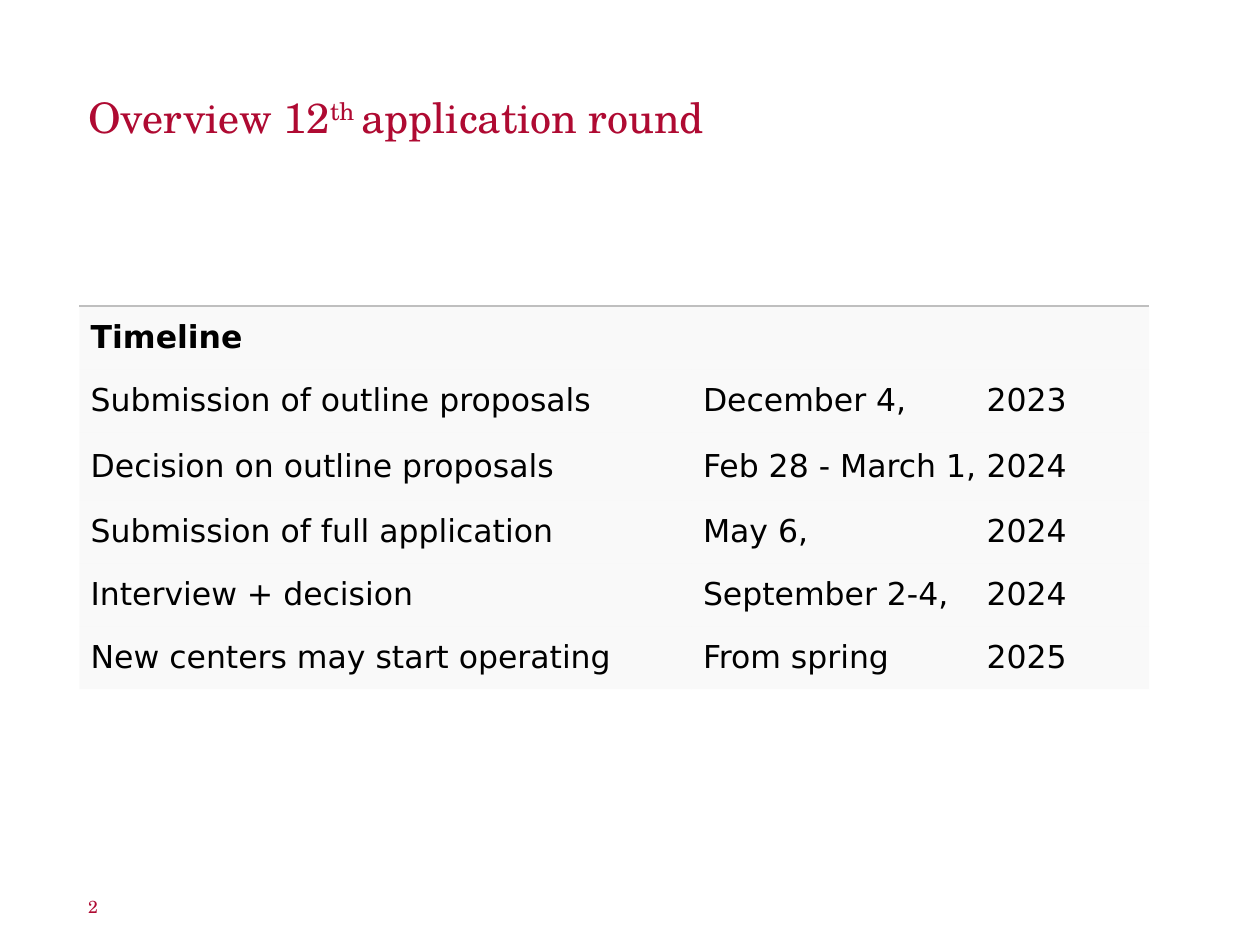
from lxml import etree
from pptx import Presentation, util as u
from pptx.dml.color import RGBColor
from pptx.enum import text
from pptx.oxml.ns import qn

CRIMSON = RGBColor(0xAF, 0x0A, 0x32)
BLACK = RGBColor(0, 0, 0)
PALE = RGBColor(0xF2, 0xF2, 0xF2)
RULE = RGBColor(0xBF, 0xBF, 0xBF)
SERIF, SANS = "TeX Gyre Schola", "DejaVu Sans"
PLAIN_TABLE = "{2D5ABB26-0587-4C30-8999-92F81FD0307C}"
YEAR_TAB = 2.25

TIMELINE = [
    ("Timeline", ""),
    ("Submission of outline proposals", "December 4,\t2023"),
    ("Decision on outline proposals", "Feb 28 - March 1,\t2024"),
    ("Submission of full application", "May 6,\t2024"),
    ("Interview + decision", "September 2-4,\t2024"),
    ("New centers may start operating", "From spring\t2025"),
]


class Deck:
    """Holds the style and the current slide; places are shares of the slide."""

    def __init__(self, width, height):
        self.prs = Presentation()
        self.prs.slide_width, self.prs.slide_height = u.Inches(width), u.Inches(height)
        self.s = self.prs.slides.add_slide(self.prs.slide_layouts[5])

    def box(self, x, y, w, h):
        sw, sh = self.prs.slide_width, self.prs.slide_height
        return int(x * sw), int(y * sh), int(w * sw), int(h * sh)

    def font(self, p, name, size, color, bold=False):
        p.font.name, p.font.size, p.font.bold = name, u.Pt(size), bold
        p.font.color.rgb = color

    def frame(self, sp):
        tf = sp.text_frame
        tf.word_wrap, tf.auto_size = True, text.MSO_AUTO_SIZE.NONE
        tf.vertical_anchor = text.MSO_ANCHOR.BOTTOM
        tf.margin_left = tf.margin_top = tf.margin_right = tf.margin_bottom = 0
        return tf.paragraphs[0]

    def title(self, place, runs):
        sp = self.s.shapes.title
        sp.left, sp.top, sp.width, sp.height = self.box(*place)
        p = self.frame(sp)
        p.alignment, p.line_spacing = text.PP_ALIGN.LEFT, u.Pt(30)
        for words, raised in runs:
            r = p.add_run()
            r.text = words
            if raised:
                r.font._element.set("baseline", "30000")
        self.font(p, SERIF, 24, CRIMSON)

    def label(self, place, words):
        p = self.frame(self.s.shapes.add_textbox(*self.box(*place)))
        p.text = words
        self.font(p, SERIF, 10, CRIMSON)

    def table(self, place, rows, widths, heights):
        shape = self.s.shapes.add_table(len(rows), len(widths), *self.box(*place))
        table = shape.table
        table.first_row = table.horz_banding = False
        table._tbl.tblPr.find(qn("a:tableStyleId")).text = PLAIN_TABLE
        for column, width in zip(table.columns, widths):
            column.width = u.Inches(width)
        for row, height, words in zip(table.rows, heights, rows):
            row.height = u.Inches(height)
            for cell, value in zip(row.cells, words):
                self.cell(cell, value, bold=words is rows[0])
        for cell in table.rows[0].cells:
            self.top_rule(cell)

    def cell(self, cell, words, bold):
        cell.margin_left = cell.margin_right = u.Inches(0.09)
        cell.margin_top, cell.margin_bottom = u.Inches(0.12), 0
        cell.vertical_anchor = text.MSO_ANCHOR.MIDDLE
        cell.fill.solid()
        cell.fill.fore_color.rgb = PALE
        color = cell._tc.tcPr.find(".//" + qn("a:srgbClr"))
        etree.SubElement(color, qn("a:alpha"), val="45000")
        p = cell.text_frame.paragraphs[0]
        p.text, p.line_spacing = words, u.Pt(12.5)
        if "\t" in words:
            tabs = etree.SubElement(p._p.get_or_add_pPr(), qn("a:tabLst"))
            etree.SubElement(tabs, qn("a:tab"), pos=str(u.Inches(YEAR_TAB)), algn="l")
        self.font(p, SANS, 18, BLACK, bold)

    def top_rule(self, cell):
        line = etree.Element(qn("a:lnT"), w=str(u.Pt(1)))
        fill = etree.SubElement(line, qn("a:solidFill"))
        etree.SubElement(fill, qn("a:srgbClr"), val=str(RULE))
        cell._tc.tcPr.insert(0, line)


def main():
    deck = Deck(10, 7.5)

    # Heading
    deck.title((0.07, 0.05, 0.86, 0.1),
               [("Overview 12", False), ("th ", True), ("application round", False)])

    # Page number
    deck.label((0.07, 0.93, 0.04, 0.04), "2")

    # Timeline table
    deck.table((0.063, 0.324, 0.85, 0.41), TIMELINE,
               widths=(4.86, 3.63), heights=(0.5, 0.5, 0.54, 0.5, 0.5, 0.5))

    deck.prs.save("out.pptx")


if __name__ == "__main__":
    main()
